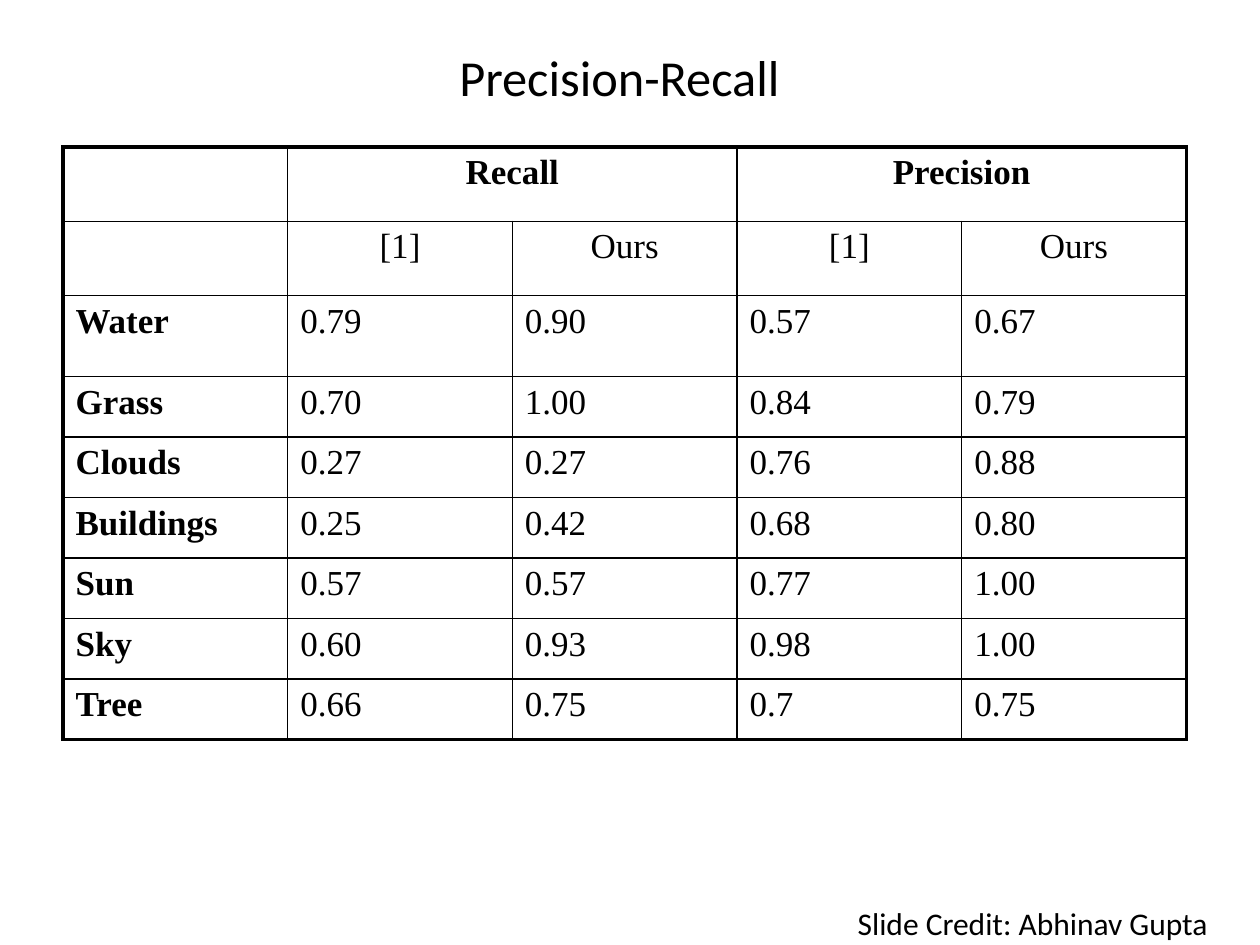
from pptx import Presentation
from pptx.dml.color import RGBColor
from pptx.enum.text import MSO_ANCHOR, PP_ALIGN
from pptx.oxml import parse_xml
from pptx.oxml.ns import nsdecls
from pptx.util import Pt

TITLE = "Precision-Recall"
CREDIT = "Slide Credit: Abhinav Gupta"
GROUPS = ["Recall", "Precision"]
HEADS = ["[1]", "Ours"]
SCORES = [
    ("Water", "0.79", "0.90", "0.57", "0.67"),
    ("Grass", "0.70", "1.00", "0.84", "0.79"),
    ("Clouds", "0.27", "0.27", "0.76", "0.88"),
    ("Buildings", "0.25", "0.42", "0.68", "0.80"),
    ("Sun", "0.57", "0.57", "0.77", "1.00"),
    ("Sky", "0.60", "0.93", "0.98", "1.00"),
    ("Tree", "0.66", "0.75", "0.7", "0.75"),
]
THEME = {
    "ink": "000000",
    "sans": "Calibri",
    "serif": "Times New Roman",
    "title": 28.8,
    "cell": 20,
    "note": 18,
    "thin": 1,
    "thick": 2.25,
}
LEFT, TOP, WIDTH = 36, 84, 642
HIGHS = [42.5, 42.5, 46.25] + [34.6] * 6


def write(frame, text, font="sans", size="note", bold=False, align=PP_ALIGN.LEFT):
    para = frame.paragraphs[0]
    para.alignment = align
    run = para.add_run()
    run.text = text
    run.font.name = THEME[font]
    run.font.size = Pt(THEME[size])
    run.font.bold = bold
    run.font.color.rgb = RGBColor.from_string(THEME["ink"])


def add_box(slide, box, text, anchor=MSO_ANCHOR.TOP, **style):
    frame = slide.shapes.add_textbox(*map(Pt, box)).text_frame
    frame.word_wrap = True
    frame.vertical_anchor = anchor
    write(frame, text, **style)


def rule(cell, outer):
    props = cell._tc.get_or_add_tcPr()
    for side in "LRTB":
        width = Pt(THEME["thick" if side in outer else "thin"])
        props.append(parse_xml(
            f'<a:ln{side} {nsdecls("a")} w="{width}"><a:solidFill>'
            f'<a:srgbClr val="{THEME["ink"]}"/></a:solidFill></a:ln{side}>'
        ))
    cell.fill.background()


def add_grid(slide):
    span = len(HEADS)
    top = [""]
    for name in GROUPS:
        top += [name] + [""] * (span - 1)
    rows = [top, [""] + HEADS * len(GROUPS)] + SCORES
    count, cols = len(rows), len(top)
    box = map(Pt, (LEFT, TOP, WIDTH, sum(HIGHS)))
    table = slide.shapes.add_table(count, cols, *box).table
    table.first_row = table.horz_banding = False
    for col in table.columns:
        col.width = Pt(WIDTH / cols)
    for row, high in zip(table.rows, HIGHS):
        row.height = Pt(high)
    for start in range(1, cols, span):
        table.cell(0, start).merge(table.cell(0, start + span - 1))
    for r, row in enumerate(rows):
        for c, text in enumerate(row):
            cell = table.cell(r, c)
            last = c + (cell.span_width if cell.is_merge_origin else 1)
            edges = {"L": c == 0, "R": last == cols, "T": r == 0, "B": r == count - 1}
            rule(cell, [side for side, outer in edges.items() if outer])
            if text:
                write(cell.text_frame, text, font="serif", size="cell",
                      bold=r == 0 or c == 0,
                      align=PP_ALIGN.CENTER if r < 2 else PP_ALIGN.LEFT)


def main():
    deck = Presentation()
    deck.slide_width, deck.slide_height = Pt(720), Pt(540)
    slide = deck.slides.add_slide(deck.slide_layouts[6])
    add_box(slide, (30, 24, 648, 39.6), TITLE, anchor=MSO_ANCHOR.MIDDLE,
            size="title", align=PP_ALIGN.CENTER)
    add_grid(slide)
    add_box(slide, (483, 513.25, 237, 29), CREDIT)
    deck.save("out.pptx")


if __name__ == "__main__":
    main()
